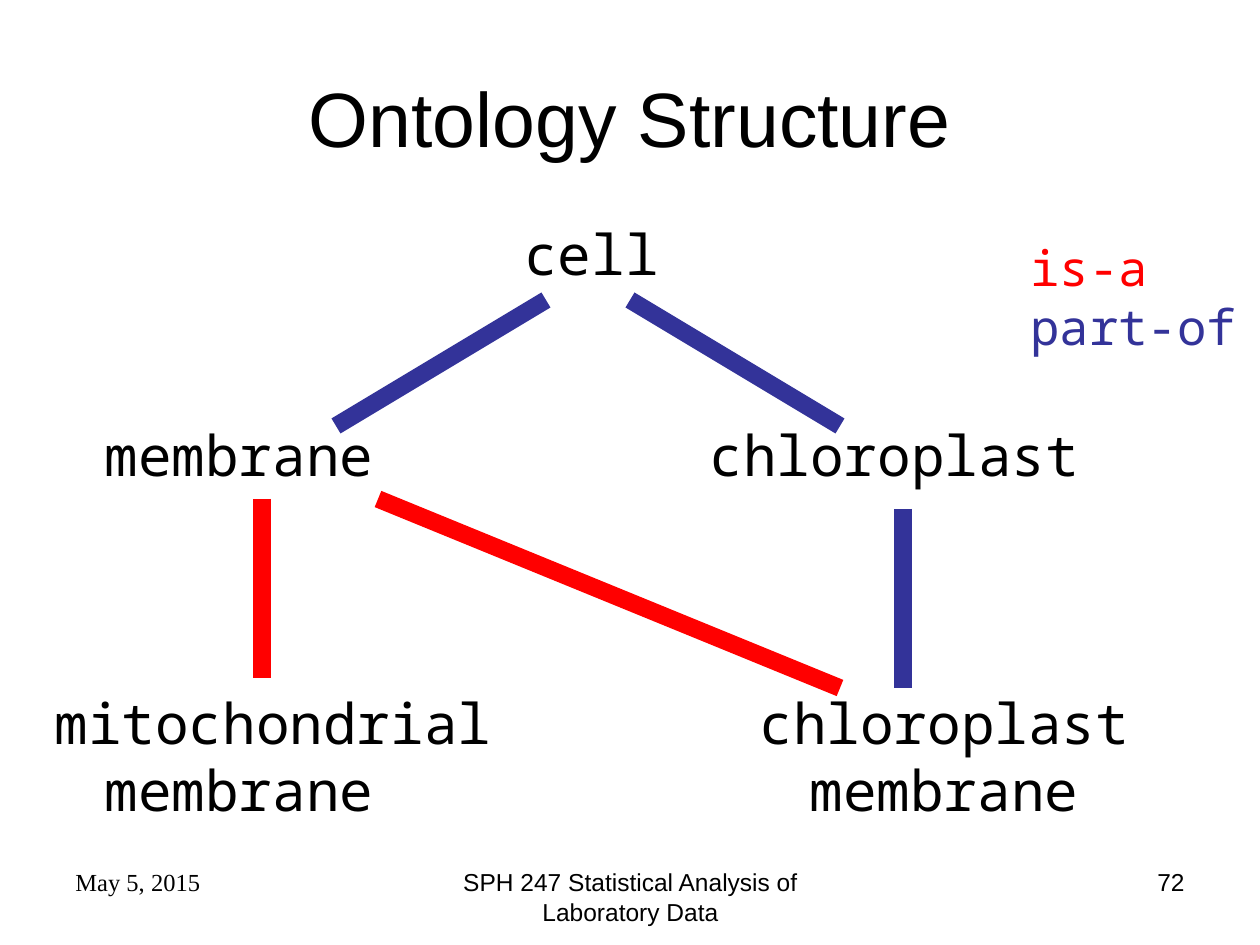
import pptx
import pptx.dml.color
import pptx.enum.shapes
import pptx.enum.text
import pptx.oxml.ns
import pptx.util

EMU_PER_PX = 914400 / 126
COLORS = {"text": "000000", "is-a": "FF0000", "part-of": "333399"}
MONO = "Noto Sans Mono"
ALIGN = pptx.enum.text.PP_ALIGN
ROW_HEIGHT = 67
INSET_X, INSET_Y = 13, 6
SECOND_LINE_INDENT = 50


def px(length):
    return pptx.util.Emu(round(length * EMU_PER_PX))


def add_text(page, box, lines, size, font, align=ALIGN.LEFT, wrap=True, indent=0):
    """Write (text, colour name) lines; lines after the first are indented."""
    shape = page.shapes.add_textbox(*map(px, box))
    frame = shape.text_frame
    frame.word_wrap = wrap
    for number, (text, color) in enumerate(lines):
        para = frame.add_paragraph() if number else frame.paragraphs[0]
        para.alignment = align
        if number and indent:
            para._p.get_or_add_pPr().set("marL", str(px(indent)))
        span = para.add_run()
        span.text = text
        span.font.size = pptx.util.Pt(size)
        span.font.name = font
        span.font.color.rgb = pptx.dml.color.RGBColor.from_string(COLORS[color])
    return frame


def add_title(page, box):
    frame = add_text(page, box, [("Ontology Structure", "text")], 44, "Arial", ALIGN.CENTER)
    frame.vertical_anchor = pptx.enum.text.MSO_ANCHOR.MIDDLE


def add_relation(page, kind, start, end):
    line = page.shapes.add_connector(
        pptx.enum.shapes.MSO_CONNECTOR.STRAIGHT, *map(px, start + end))
    line.line.width = pptx.util.Pt(10)
    line.line.color.rgb = pptx.dml.color.RGBColor.from_string(COLORS[kind])
    properties = line._element.spPr
    properties.append(properties.makeelement(pptx.oxml.ns.qn("a:effectLst"), {}))


def add_ontology(page, box):
    left, top, width, height = box
    terms = [  # text left, row, width, lines
        (485, 0, 134, ["cell"]),
        (65, 3, 269, ["membrane"]),
        (670, 3, 370, ["chloroplast"]),
        (15, 7, 437, ["mitochondrial", "membrane"]),
        (720, 7, 370, ["chloroplast", "membrane"]),
    ]
    for x, row, text_width, lines in terms:
        term_box = (left + x - INSET_X, top + row * ROW_HEIGHT,
                    text_width + 2 * INSET_X, len(lines) * ROW_HEIGHT + 2 * INSET_Y)
        add_text(page, term_box, [(line, "text") for line in lines], 32, MONO,
                 wrap=False, indent=SECOND_LINE_INDENT)

    relations = [
        ("is-a", (222, 286), (222, 465)),
        ("is-a", (338, 286), (800, 475)),
        ("part-of", (863, 296), (863, 475)),
        ("part-of", (506, 87), (296, 213)),
        ("part-of", (590, 87), (800, 213)),
    ]
    for kind, start, end in relations:
        add_relation(page, kind, (left + start[0], top + start[1]),
                     (left + end[0], top + end[1]))


def add_legend(page, box):
    add_text(page, box, [(kind, kind) for kind in ("is-a", "part-of")], 28, MONO, wrap=False)


def add_footer(page, box):
    left, top, width, height = box
    parts = [
        (0, 294, "May 5, 2015", "Times New Roman", ALIGN.LEFT),
        (368, 399, "SPH 247 Statistical Analysis of Laboratory Data", "Arial", ALIGN.CENTER),
        (840, 294, "72", "Arial", ALIGN.RIGHT),
    ]
    for x, part_width, text, font, align in parts:
        add_text(page, (left + x, top, part_width, height), [(text, "text")], 14, font, align)


def main():
    deck = pptx.Presentation()
    deck.slide_width, deck.slide_height = px(1260), px(945)
    page = deck.slides.add_slide(deck.slide_layouts[6])
    add_title(page, (63, 38, 1134, 158))
    add_ontology(page, (40, 213, 1104, 643))
    add_legend(page, (1018, 231, 231, 135))
    add_footer(page, (63, 861, 1134, 66))
    deck.save("out.pptx")


if __name__ == "__main__":
    main()
